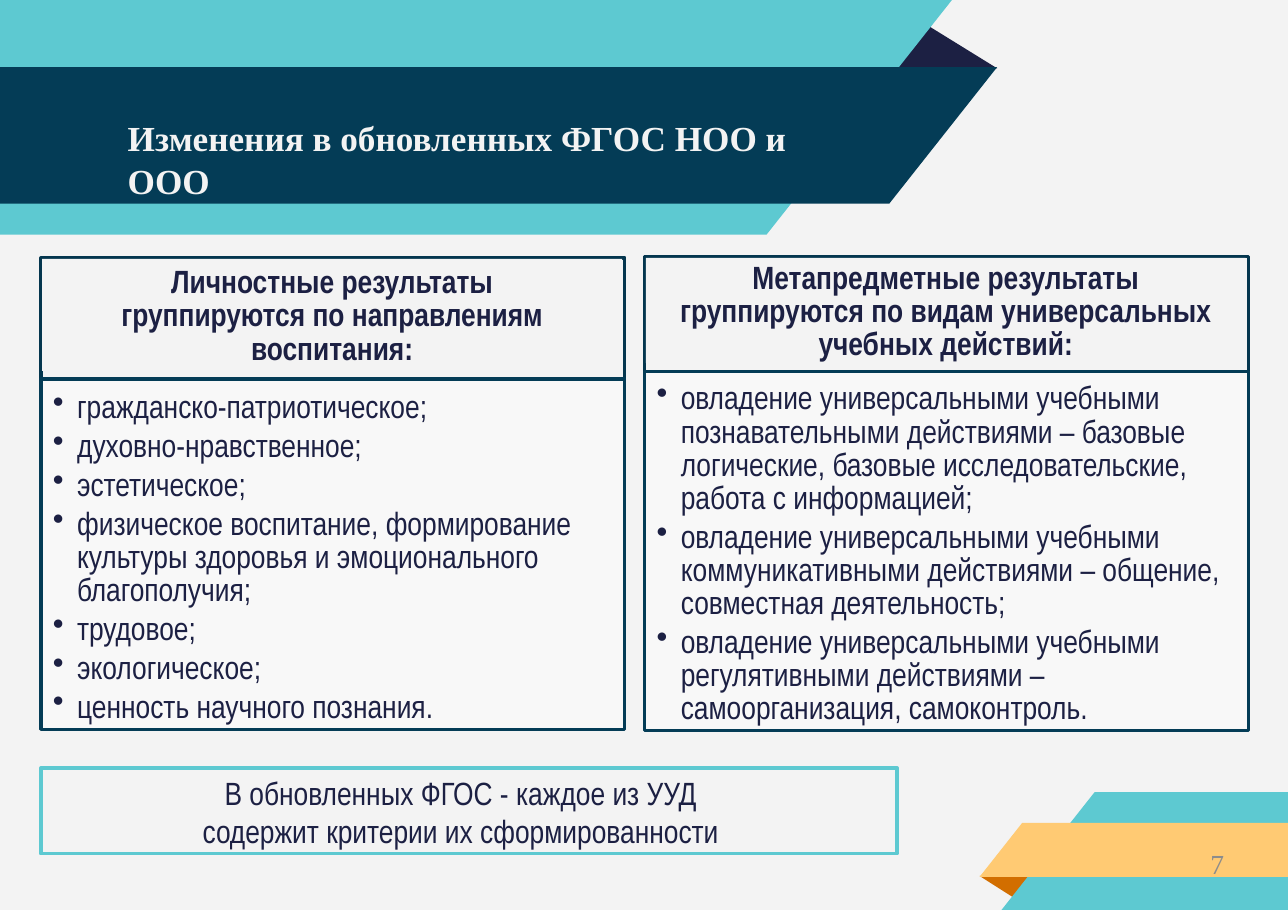
from lxml.etree import SubElement
from pptx import Presentation
from pptx.dml.color import RGBColor
from pptx.enum.shapes import MSO_SHAPE
from pptx.enum.text import MSO_ANCHOR, PP_ALIGN
from pptx.oxml.ns import qn
from pptx.util import Emu, Inches, Pt

WIDE, HIGH = Inches(11.69), Inches(8.26)
SLOPE = 0.79 * 8.26 / 11.69  # sideways share lost per share of height
PAPER, INK, NAVY, EDGE = "F3F3F3", "1C2043", "043C56", "04364E"
TEAL, AMBER, RUST, GREY, PALE = "5DC9D1", "FFCA73", "D26E00", "8C8C8C", "F9F9F9"
SERIF, NARROW = "Times New Roman", "Arial Narrow"


def hue(code):
    return RGBColor.from_string(code)


def across(share):
    """Percent of the slide's width."""
    return Emu(round(WIDE * share / 100))


def down(share):
    """Percent of the slide's height."""
    return Emu(round(HIGH * share / 100))


def place(box):
    x, y, w, h = box
    return across(x), down(y), across(w), down(h)


def within(box, x, y, w, h):
    return box[0] + x, box[1] + y, w, h


def paint(shape, fill=None, line=None, alpha=None):
    shape.shadow.inherit = False
    if fill:
        shape.fill.solid()
        shape.fill.fore_color.rgb = hue(fill)
        if alpha:
            tint = shape.fill._xPr.find(qn("a:solidFill"))[0]
            SubElement(tint, qn("a:alpha"), val=str(alpha * 1000))
    else:
        shape.fill.background()
    if line:
        shape.line.color.rgb = hue(line)
        shape.line.width = Pt(2.25)
    else:
        shape.line.fill.background()


def block(slide, box, **look):
    shape = slide.shapes.add_shape(MSO_SHAPE.RECTANGLE, *place(box))
    paint(shape, **look)
    return shape


def poly(slide, box, points, fill):
    """Outline whose points are offsets from the corner of the box."""
    spots = [(across(box[0] + x), down(box[1] + y)) for x, y in points]
    pen = slide.shapes.build_freeform(*spots[0])
    pen.add_line_segments(spots[1:])
    paint(pen.convert_to_shape(), fill)


def ribbon(slide, box, fill, side):
    """Band with one slanted end, on the left or the right."""
    w, h = box[2:]
    cut = h * SLOPE
    if side == "right":
        points = (0, 0), (w, 0), (w - cut, h), (0, h)
    else:
        points = (cut, 0), (w, 0), (w, h), (0, h)
    poly(slide, box, points, fill)


def write(shape, lines, size=21, font=NARROW, color=INK, bold=False,
          align=PP_ALIGN.LEFT, pads=(0, 0, 0), lead=None, bullet=False):
    """Fill a shape with paragraphs; pads are left, top, right in inches."""
    frame = shape.text_frame
    frame.word_wrap = True
    frame.vertical_anchor = MSO_ANCHOR.TOP
    frame.margin_left, frame.margin_top, frame.margin_right = map(Inches, pads)
    frame.margin_bottom = 0
    for rank, line in enumerate(lines):
        para = frame.paragraphs[0] if rank == 0 else frame.add_paragraph()
        para.alignment = align
        if lead:
            para.line_spacing = lead
        if bullet:
            long = len(line) > 30
            if long:
                para.line_spacing = 0.86
            if rank:
                para.space_before = Pt(3.6 if long else 0.2)
            props = para._p.get_or_add_pPr()
            props.set("marL", str(Inches(0.33)))
            props.set("indent", str(-Inches(0.22)))
            SubElement(props, qn("a:buChar"), char="•")
        run = para.add_run()
        run.text = line
        run.font.size, run.font.name, run.font.bold = Pt(size), font, bold
        run.font.color.rgb = hue(color)


def banner(slide, box, title):
    poly(slide, box, [(71.6, 2.42), (68.86, 7.51), (77.42, 7.51)], INK)
    ribbon(slide, within(box, 0, 0, 73.91, box[3]), TEAL, "right")
    ribbon(slide, within(box, 0, 7.38, box[2], 15.01), NAVY, "right")
    area = slide.shapes.add_textbox(*place(within(box, 9.75, 12.59, 52.27, 9.56)))
    write(area, [title], size=23, font=SERIF, color=PAPER, bold=True,
          pads=(0.02, 0.02, 0))


def corner(slide, box, number):
    poly(slide, box, [(4.28, 9.2), (0, 9.2), (2.82, 11.74)], RUST)
    ribbon(slide, within(box, 1.71, 0, box[2] - 1.71, box[3]), TEAL, "left")
    ribbon(slide, within(box, 0, 3.39, box[2], 5.93), AMBER, "left")
    area = slide.shapes.add_textbox(*place(within(box, -4.02, 6.05, 23.01, 3.63)))
    write(area, [number], size=18, font=SERIF, color=GREY, align=PP_ALIGN.RIGHT)


def panel(slide, box, head, title, items, side, rise, drop):
    """Framed heading over a bulleted list."""
    w, h = box[2:]
    block(slide, within(box, 0, 0, w, head), line=EDGE)
    label = block(slide, within(box, 0.1, 0.12, w - 0.3, head - 1), fill=PAPER)
    write(label, title, bold=True, align=PP_ALIGN.CENTER,
          pads=(side, rise, side), lead=Pt(21.8))
    body = block(slide, within(box, 0, head, w, h - head),
                 fill=PALE, line=NAVY, alpha=90)
    write(body, items, pads=(0, drop, 0), bullet=True)


def note(slide, box, lines):
    shape = block(slide, box, fill=PAPER, line=TEAL)
    write(shape, lines, align=PP_ALIGN.CENTER, pads=(1.4, 0.05, 1.55))


def main():
    deck = Presentation()
    deck.slide_width, deck.slide_height = WIDE, HIGH
    slide = deck.slides.add_slide(deck.slide_layouts[6])
    slide.background.fill.solid()
    slide.background.fill.fore_color.rgb = hue(PAPER)

    banner(slide, (0, 0, 77.42, 25.79), "Изменения в обновленных ФГОС НОО и ООО")
    corner(slide, (76.05, 87.05, 23.95, 12.95), "7")
    panel(slide, (3.17, 28.33, 45.34, 51.82), 13.32,
          ["Личностные результаты",
           "группируются по направлениям воспитания:"],
          ["гражданско-патриотическое;",
           "духовно-нравственное;",
           "эстетическое;",
           "физическое воспитание, формирование культуры здоровья "
           "и эмоционального благополучия;",
           "трудовое;",
           "экологическое;",
           "ценность научного познания."],
          side=0.66, rise=0.07, drop=0.07)
    panel(slide, (50.04, 28.21, 46.88, 52.06), 12.59,
          ["Метапредметные результаты",
           "группируются по видам универсальных учебных действий:"],
          ["овладение универсальными учебными познавательными действиями – "
           "базовые логические, базовые исследовательские, "
           "работа с информацией;",
           "овладение универсальными учебными коммуникативными действиями – "
           "общение, совместная деятельность;",
           "овладение универсальными учебными регулятивными действиями – "
           "самоорганизация, самоконтроль."],
          side=0.26, rise=0.04, drop=0.11)
    note(slide, (3.17, 84.38, 66.47, 9.44),
         ["В обновленных ФГОС - каждое из УУД содержит критерии их "
          "сформированности"])
    deck.save("out.pptx")


if __name__ == "__main__":
    main()
